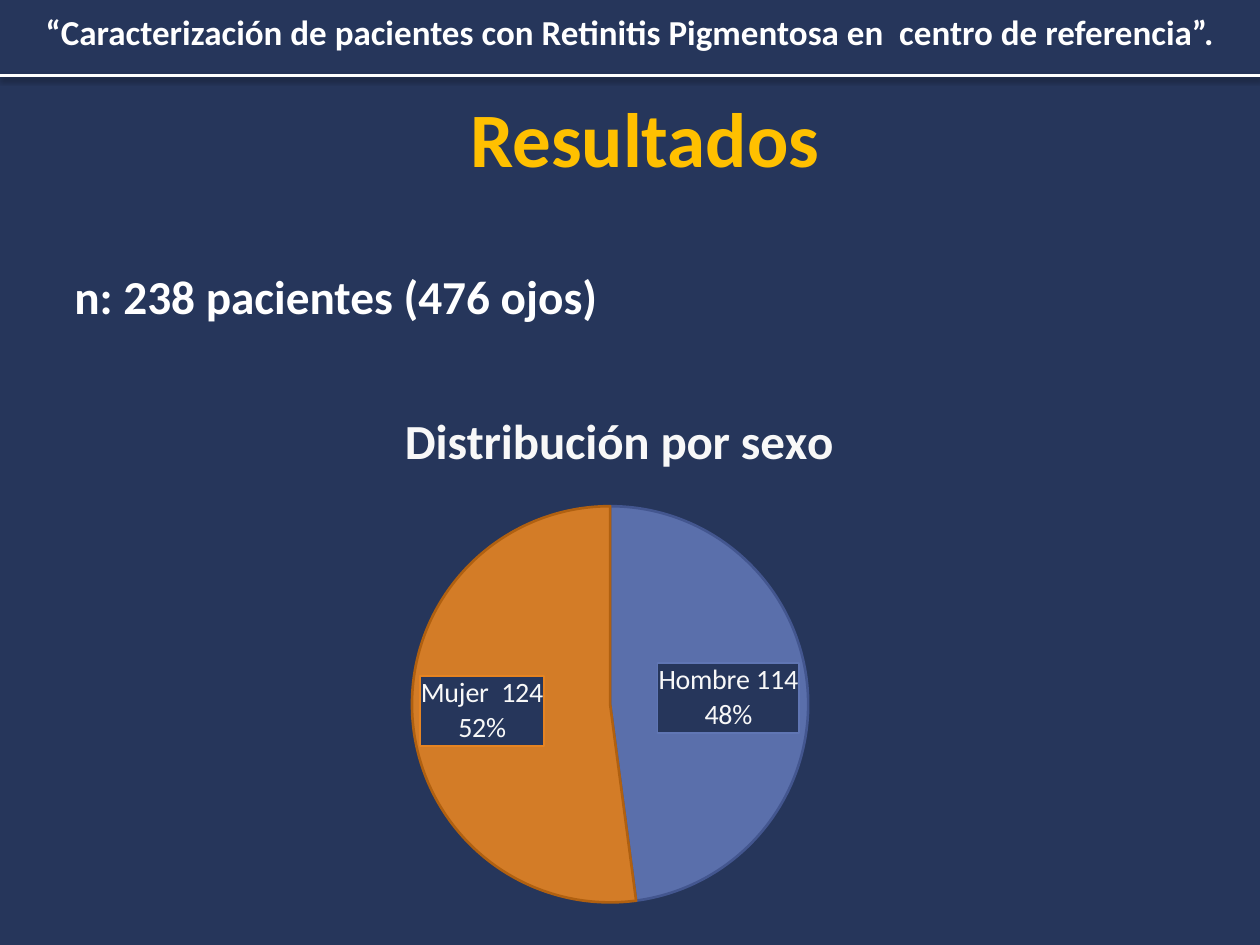
from lxml import etree
from pptx import Presentation
from pptx.chart.data import CategoryChartData
from pptx.dml.color import RGBColor
from pptx.enum.chart import XL_CHART_TYPE, XL_LABEL_POSITION
from pptx.enum.shapes import MSO_CONNECTOR
from pptx.enum.text import MSO_ANCHOR, PP_ALIGN
from pptx.oxml import parse_xml
from pptx.oxml.ns import nsdecls, qn
from pptx.util import Inches, Pt

COLORS = {
    "back": "26365B", "white": "FFFFFF", "gold": "FFC000", "pale": "F8F8F8",
    "blue": "6076B4", "navy": "43568F", "orange": "E68422", "brown": "B06010",
}


def rgb(name):
    return RGBColor.from_string(COLORS[name])


def layout(edge=False, **vals):
    """Manual chart layout; without edge, x and y are offsets."""
    modes = '<c:xMode val="edge"/><c:yMode val="edge"/>' if edge else ""
    sizes = "".join(f'<c:{tag} val="{val}"/>' for tag, val in vals.items())
    return parse_xml(f'<c:layout {nsdecls("c")}><c:manualLayout>{modes}{sizes}'
                     '</c:manualLayout></c:layout>')


def drop(root):
    for old in root.findall(qn("c:layout")):
        root.remove(old)


class Deck:
    font = "Calibri"

    def __init__(self, width, height):
        self.prs = Presentation()
        self.prs.slide_width = Inches(width)
        self.prs.slide_height = Inches(height)
        self.slide = self.prs.slides.add_slide(self.prs.slide_layouts[6])
        fill = self.slide.background.fill
        fill.solid()
        fill.fore_color.rgb = rgb("back")

    def run(self, para, text, size, color, bold=True):
        run = para.add_run()
        run.text = text
        font = run.font
        font.name, font.size, font.bold = self.font, Pt(size), bold
        font.color.rgb = rgb(color)

    def text(self, box, paras, anchor=MSO_ANCHOR.TOP):
        """Each paragraph: text, size, color, alignment, indent, space before."""
        frame = self.slide.shapes.add_textbox(*map(Inches, box)).text_frame
        frame.word_wrap = True
        frame.vertical_anchor = anchor
        frame.margin_left = frame.margin_right = Inches(0.05)
        frame.margin_top = frame.margin_bottom = Inches(0.05)
        for i, (text, size, color, align, indent, gap) in enumerate(paras):
            para = frame.add_paragraph() if i else frame.paragraphs[0]
            para.alignment = align
            para.space_before = Pt(gap)
            if indent:
                para._p.get_or_add_pPr().set("marL", str(Inches(indent)))
            self.run(para, text, size, color)

    def rule(self, y, width):
        line = self.slide.shapes.add_connector(
            MSO_CONNECTOR.STRAIGHT, 0, Inches(y), self.prs.slide_width, Inches(y))
        line.line.color.rgb = rgb("white")
        line.line.width = Pt(width)
        line._element.spPr.append(parse_xml(
            f'<a:effectLst {nsdecls("a")}><a:outerShdw blurRad="{Pt(3)}" '
            f'dist="{Pt(1.8)}" dir="5400000"><a:srgbClr val="000000">'
            '<a:alpha val="35000"/></a:srgbClr></a:outerShdw></a:effectLst>'))

    def pie(self, box, title, slices):
        """Each slice: name, value, label lines, fill, edge, label offset."""
        data = CategoryChartData()
        data.categories = [part[0] for part in slices]
        data.add_series("Series 1", [part[1] for part in slices])
        chart = self.slide.shapes.add_chart(
            XL_CHART_TYPE.PIE, *map(Inches, box), data).chart
        chart.has_legend = False
        chart.font.name, chart.font.size = self.font, Pt(16)
        chart.font.color.rgb = rgb("pale")

        # Title and plot places
        chart.has_title = True
        head = chart.chart_title
        self.run(head.text_frame.paragraphs[0], title, 28, "pale")
        head.include_in_layout = False
        root = head._element
        drop(root)
        root.find(qn("c:tx")).addnext(layout(True, x=0.27, y=0.03))
        area = chart.element.find(".//" + qn("c:plotArea"))
        drop(area)
        plot = layout(True, x=0.28, y=0.23, w=0.42, h=0.74)
        plot[0].insert(0, etree.Element(qn("c:layoutTarget"), val="inner"))
        area.insert(0, plot)

        # Slices and their labels
        chart.plots[0].vary_by_categories = True
        series = chart.plots[0].series[0]
        labels = series.data_labels
        labels.show_value = True
        labels.show_category_name = True
        labels.show_percentage = True
        labels.font.name, labels.font.size = self.font, Pt(16)
        labels.font.color.rgb = rgb("pale")
        for i, (_, _, lines, fill, edge, shift) in enumerate(slices):
            point = series.points[i]
            point.format.fill.solid()
            point.format.fill.fore_color.rgb = rgb(fill)
            tint = point.format.fill._xPr.find(".//" + qn("a:srgbClr"))
            etree.SubElement(tint, qn("a:alpha"), val="90000")
            point.format.line.color.rgb = rgb(edge)
            point.format.line.width = Pt(1.5)
            label = point.data_label
            frame = label.text_frame
            for j, text in enumerate(lines):
                para = frame.add_paragraph() if j else frame.paragraphs[0]
                self.run(para, text, 16, "pale", False)
            label.position = XL_LABEL_POSITION.CENTER
            node = chart.element.findall(".//" + qn("c:dLbl"))[i]
            for tag in ("c:showVal", "c:showCatName", "c:showPercent"):
                node.find(qn(tag)).set("val", "1")
            node.find(qn("c:idx")).addnext(layout(x=shift, y=0))
            node.find(qn("c:tx")).addnext(parse_xml(
                f'<c:spPr {nsdecls("c", "a")}><a:solidFill><a:srgbClr '
                f'val="{COLORS["back"]}"/></a:solidFill><a:ln w="{Pt(1)}">'
                f'<a:solidFill><a:srgbClr val="{COLORS[fill]}"/></a:solidFill>'
                '</a:ln></c:spPr>'))


def main():
    deck = Deck(10, 7.5)

    # Heading and sample size
    deck.text((0.2, 0.67, 9.84, 2.3), [
        ("Resultados", 44, "gold", PP_ALIGN.CENTER, 0, 0),
        ("n: 238 pacientes (476 ojos)", 27, "white", PP_ALIGN.LEFT, 0.34, 48),
    ])

    # Top band
    deck.rule(0.6, 2)
    deck.text((0.13, 0, 9.74, 0.5), [
        ("“Caracterización de pacientes con Retinitis Pigmentosa en  centro "
         "de referencia”.", 20, "white", PP_ALIGN.CENTER, 0, 0),
    ], MSO_ANCHOR.MIDDLE)

    # Patients by sex
    deck.pie((1.06, 3.04, 7.72, 4.25), "Distribución por sexo", [
        ("Hombre ", 114, ["Hombre 114", "48%"], "blue", "navy", 0.02),
        ("Mujer ", 124, ["Mujer  124", "52%"], "orange", "brown", -0.03),
    ])
    deck.prs.save("out.pptx")


if __name__ == "__main__":
    main()
